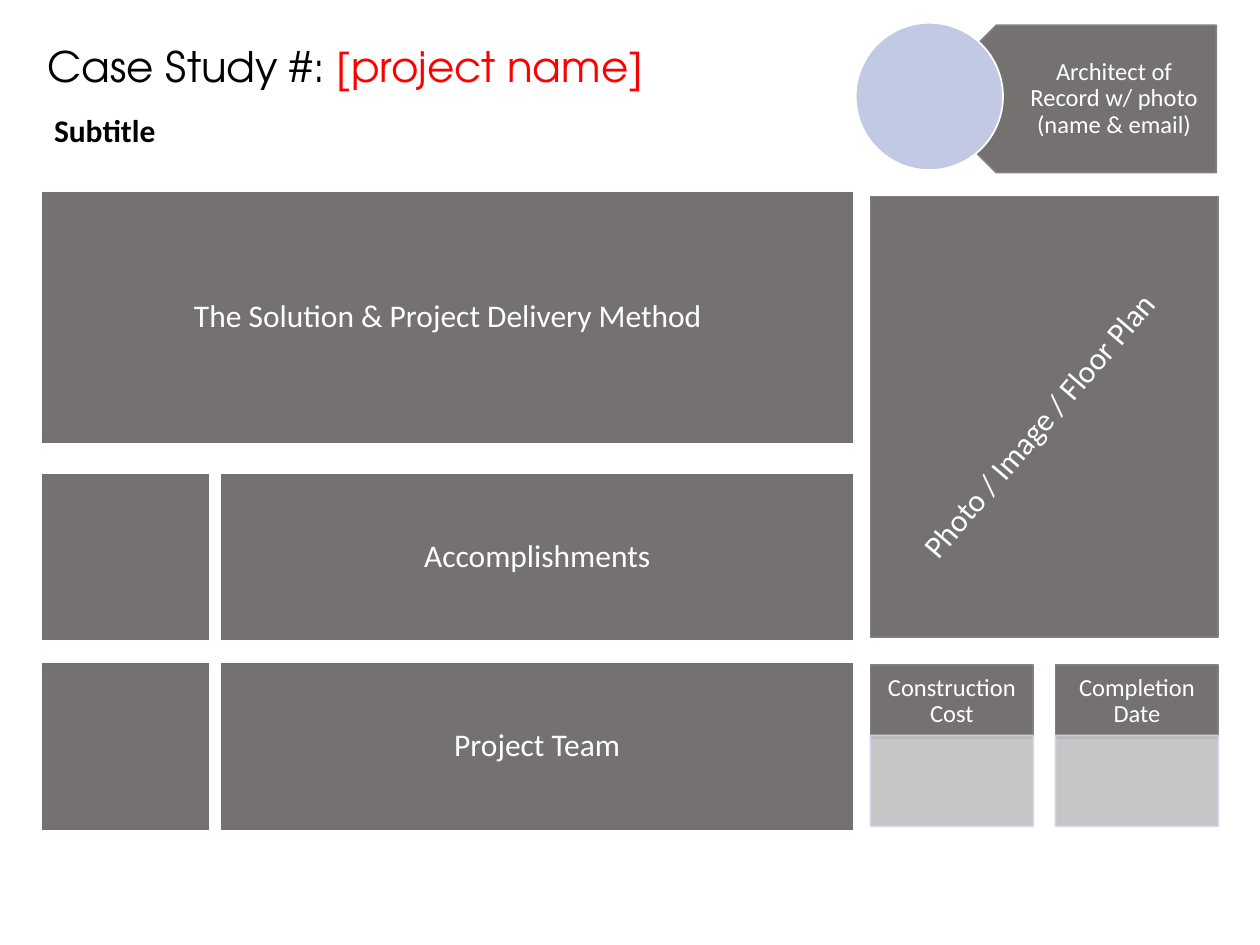
import pptx
import pptx.dml.color
import pptx.enum.shapes
import pptx.enum.text
import pptx.oxml.ns
import pptx.util
from lxml import etree

Cm = pptx.util.Cm
Pt = pptx.util.Pt
RGBColor = pptx.dml.color.RGBColor
MSO_SHAPE = pptx.enum.shapes.MSO_SHAPE
ANCHOR = pptx.enum.text.MSO_ANCHOR
ALIGN = pptx.enum.text.PP_ALIGN

WHITE = RGBColor(0xFF, 0xFF, 0xFF)
BLACK = RGBColor(0x00, 0x00, 0x00)
RED = RGBColor(0xFF, 0x00, 0x00)
GRAY = RGBColor(0x76, 0x71, 0x71)
EDGE = RGBColor(0x80, 0x80, 0x80)
SILVER = RGBColor(0xBF, 0xBF, 0xBF)
PALE_BLUE = RGBColor(0xCF, 0xD5, 0xEA)
LAVENDER = RGBColor(0xC1, 0xC9, 0xE4)


def set_opacity(color_format_owner, percent):
    color = color_format_owner.find(".//" + pptx.oxml.ns.qn("a:srgbClr"))
    alpha = etree.SubElement(color, pptx.oxml.ns.qn("a:alpha"))
    alpha.set("val", str(percent * 1000))


def add_panel(slide, box, fill=GRAY, line=WHITE, kind=MSO_SHAPE.RECTANGLE, opacity=100):
    panel = slide.shapes.add_shape(kind, *map(Cm, box))
    panel.shadow.inherit = False
    panel.fill.solid()
    panel.fill.fore_color.rgb = fill
    if line is None:
        panel.line.fill.background()
    else:
        panel.line.color.rgb = line
        panel.line.width = Pt(1)
    if opacity < 100:
        properties = panel.fill._xPr
        set_opacity(properties.find(pptx.oxml.ns.qn("a:solidFill")), opacity)
        if line is not None:
            set_opacity(properties.find(pptx.oxml.ns.qn("a:ln")), opacity)
    return panel


def write(shape, text, size, insets, color=WHITE, align=ALIGN.CENTER,
          anchor=ANCHOR.MIDDLE, spacing=0.9, font="Calibri", bold=False):
    frame = shape.text_frame
    frame.word_wrap = True
    frame.vertical_anchor = anchor
    frame.margin_left, frame.margin_top, frame.margin_right, frame.margin_bottom = map(Cm, insets)
    frame.text = text
    paragraph = frame.paragraphs[0]
    paragraph.alignment = align
    paragraph.line_spacing = spacing
    paragraph.font.size = Pt(size)
    for run in paragraph.runs:
        run.font.name = font
        run.font.size = Pt(size)
        run.font.color.rgb = color
        run.font.bold = bold
    return paragraph


def add_heading(slide, left, top):
    title = add_panel(slide, (left, top, 16.05, 1.52), WHITE, None, opacity=70)
    paragraph = write(title, "Case Study #: ", 24, (0.5, 0.25, 0, 0), BLACK, ALIGN.LEFT,
                      ANCHOR.TOP, 0.8, "TeX Gyre Adventor")
    project = paragraph.add_run()
    project.text = "[project name]"
    project.font.name = "TeX Gyre Adventor"
    project.font.size = Pt(24)
    project.font.color.rgb = RED
    subtitle = add_panel(slide, (left + 0.38, top + 1.2, 14.02, 1.07), WHITE, None, opacity=70)
    write(subtitle, "Subtitle", 18, (0.25, 0.25, 0.25, 0), BLACK, ALIGN.LEFT,
          spacing=1.0, bold=True)


def add_photo(slide, left, top, width, height):
    add_panel(slide, (left, top, width, height), line=EDGE)
    caption = slide.shapes.add_textbox(Cm(left - 0.33), Cm(top + 3.94), Cm(7.67), Cm(1.02))
    write(caption, "Photo / Image / Floor Plan", 18, (0.25, 0.13, 0.25, 0.13),
          align=ALIGN.LEFT, anchor=ANCHOR.TOP, spacing=1.0)
    caption.rotation = 310.6


def add_solution(slide, left, top, width, height):
    solution = add_panel(slide, (left, top, width, height))
    write(solution, "The Solution & Project Delivery Method", 18, (0.1, 0.08, 0.1, 0.08))


def add_topic(slide, left, top, width, height, topic):
    gap = 0.2
    add_panel(slide, (left, top, height, height))
    indent = height + gap
    detail = add_panel(slide, (left + indent, top, width - indent, height))
    write(detail, topic, 18, (0.36,) * 4)


def add_fact(slide, left, top, width, label):
    header = add_panel(slide, (left, top, width, 1.47), line=EDGE)
    write(header, label, 14, (0.28, 0.15, 0.28, 0.15))
    add_panel(slide, (left, top + 1.42, width, 1.83), SILVER, PALE_BLUE, opacity=90)


def add_architect(slide, left, top, size):
    plate = add_panel(slide, (left + 1.35, top + 0.05, 5.92, size), line=EDGE,
                      kind=MSO_SHAPE.PENTAGON)
    plate.rotation = 180
    label = slide.shapes.add_textbox(Cm(left + 2.1), Cm(top + 0.05), Cm(5.18), Cm(size))
    write(label, "Architect of Record w/ photo (name & email)", 14, (1.32, 0.15, 0.28, 0.15))
    add_panel(slide, (left, top, size, size), LAVENDER, kind=MSO_SHAPE.OVAL)


def main():
    presentation = pptx.Presentation()
    presentation.slide_width = Cm(25.4)
    presentation.slide_height = Cm(19.05)
    slide = presentation.slides.add_slide(presentation.slide_layouts[6])

    main_left, main_width = 0.84, 16.38
    side_left, side_width = 17.55, 7.01
    fact_width = 3.28

    add_heading(slide, 0.46, 0.76)
    add_solution(slide, main_left, 3.86, main_width, 5.08)
    for row, topic in enumerate(("Accomplishments", "Project Team")):
        add_topic(slide, main_left, 9.53 + row * 3.82, main_width, 3.4, topic)
    for column, label in enumerate(("Construction Cost", "Completion Date")):
        fact_left = side_left + column * (side_width - fact_width)
        add_fact(slide, fact_left, 13.41, fact_width, label)
    add_architect(slide, 17.25, 0.46, 2.97)
    add_photo(slide, side_left, 3.96, side_width, 8.89)
    presentation.save("out.pptx")


if __name__ == "__main__":
    main()
